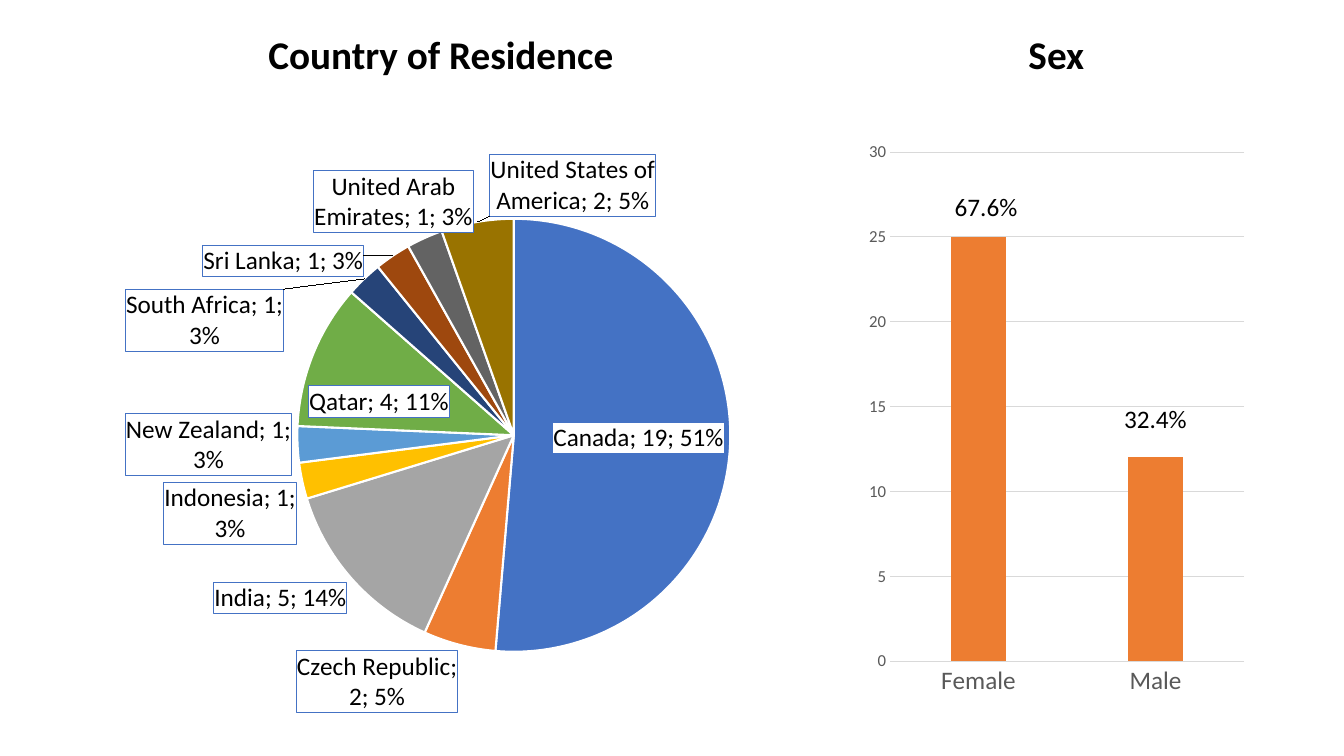
from dataclasses import dataclass

from lxml import etree
from pptx import Presentation
from pptx.chart.data import CategoryChartData
from pptx.dml.color import RGBColor
from pptx.enum.chart import XL_CHART_TYPE, XL_LABEL_POSITION, XL_TICK_MARK
from pptx.enum.text import MSO_ANCHOR, MSO_AUTO_SIZE, PP_ALIGN
from pptx.oxml import parse_xml
from pptx.oxml.ns import nsdecls, qn
from pptx.util import Cm, Pt

PIE, COLUMN = XL_CHART_TYPE.PIE, XL_CHART_TYPE.COLUMN_CLUSTERED
BEST_FIT = XL_LABEL_POSITION.BEST_FIT
NO_TICK = XL_TICK_MARK.NONE
CENTER, MIDDLE, NO_FIT = PP_ALIGN.CENTER, MSO_ANCHOR.MIDDLE, MSO_AUTO_SIZE.NONE


@dataclass(frozen=True)
class Theme:
    """Colours, font and type sizes of the slide."""
    font: str = "Calibri"
    heading: int = 28
    label: int = 18
    scale: int = 12
    base: int = 10
    ink: str = "000000"
    muted: str = "595959"
    grid: str = "D9D9D9"
    paper: str = "FFFFFF"
    frame: str = "4472C4"
    bar: str = "ED7D31"
    slices: tuple = ("4472C4", "ED7D31", "A5A5A5", "FFC000", "5B9BD5",
                     "70AD47", "264478", "9E480E", "636363", "997300")


@dataclass(frozen=True)
class Box:
    """A rectangle in centimetres."""
    left: float
    top: float
    width: float
    height: float

    def emu(self):
        """Return the rectangle as lengths."""
        return Cm(self.left), Cm(self.top), Cm(self.width), Cm(self.height)


THEME = Theme()
COUNTRIES = {
    "Canada": 19, "Czech Republic": 2, "India": 5, "Indonesia": 1,
    "New Zealand": 1, "Qatar": 4, "South Africa": 1, "Sri Lanka": 1,
    "United Arab Emirates": 1, "United States of America": 2,
}
SEXES = {"Female": 25, "Male": 12}
SHARES = (("67.6%", 3.16, 4.06), ("32.4%", 7.43, 9.39))


def style_font(font, size, color=THEME.ink, bold=False):
    """Apply the theme font with a size and colour."""
    font.name, font.size, font.bold = THEME.font, Pt(size), bold
    font.color.rgb = RGBColor.from_string(color)


def style_line(line, color, width):
    """Give a line a colour and a width."""
    line.color.rgb = RGBColor.from_string(color)
    line.width = Pt(width)


def write_centered(holder, box, text, size, bold=False):
    """Place one centred line of text in a box."""
    holder.left, holder.top, holder.width, holder.height = box.emu()
    frame = holder.text_frame
    frame.auto_size, frame.word_wrap = NO_FIT, False
    frame.vertical_anchor = MIDDLE
    paragraph = frame.paragraphs[0]
    paragraph.alignment = CENTER
    run = paragraph.add_run()
    run.text = text
    style_font(run.font, size, bold=bold)


def add_heading(holder, region, text, width):
    """Centre a heading at the top of its region."""
    left = region.left + (region.width - width) / 2
    write_centered(holder, Box(left, region.top, width, 1.45), text, THEME.heading, True)


def add_count_chart(slide, kind, region, offset, counts, plot_area):
    """Add a plain chart below the heading with a fixed inner plot area."""
    data = CategoryChartData()
    data.categories = list(counts)
    data.add_series("Series 1", list(counts.values()))
    box = Box(region.left, region.top + offset, region.width, region.height - offset)
    chart = slide.shapes.add_chart(kind, *box.emu(), data).chart
    chart.has_legend = chart.has_title = False
    style_font(chart.font, THEME.base)
    area = chart.plots[0]._element.getparent()
    for old in area.findall(qn("c:layout")):
        area.remove(old)
    places = "".join(f'<c:{tag} val="{value}"/>' for tag, value in zip("xywh", plot_area))
    area.insert(0, parse_xml(
        f'<c:layout {nsdecls("c")}><c:manualLayout><c:layoutTarget val="inner"/>'
        f'<c:xMode val="edge"/><c:yMode val="edge"/>{places}</c:manualLayout></c:layout>'))
    return chart


def frame_labels(labels):
    """Give data labels a white fill, a thin frame and a separator."""
    element = labels._element
    element.find(qn("c:txPr")).addprevious(parse_xml(
        f'<c:spPr {nsdecls("c", "a")}><a:solidFill><a:srgbClr val="{THEME.paper}"/></a:solidFill>'
        f'<a:ln w="9525"><a:solidFill><a:srgbClr val="{THEME.frame}"/></a:solidFill></a:ln></c:spPr>'))
    separator = etree.Element(qn("c:separator"))
    separator.text = "; "
    last_flag = element.find(qn("c:showBubbleSize"))
    if last_flag is None:
        last_flag = element.find(qn("c:showPercent"))
    last_flag.addnext(separator)


def add_residence(slide, region):
    """Build the country of residence pie with its heading."""
    add_heading(slide.shapes.title, region, "Country of Residence", 9.3)
    chart = add_count_chart(slide, PIE, region, 2.08, COUNTRIES, (0.329, 0.178, 0.516, 0.695))
    plot = chart.plots[0]
    plot.vary_by_categories = True
    for index, color in enumerate(THEME.slices):
        country = plot.series[0].points[index].format
        country.fill.solid()
        country.fill.fore_color.rgb = RGBColor.from_string(color)
        style_line(country.line, THEME.paper, 1.5)
    plot.has_data_labels = True
    labels = plot.data_labels
    labels.show_category_name = labels.show_value = labels.show_percentage = True
    labels.position = BEST_FIT
    style_font(labels.font, THEME.label)
    frame_labels(labels)


def add_sex(slide, region):
    """Build the sex column chart with its heading and shares."""
    add_heading(slide.shapes.add_textbox(0, 0, 0, 0), region, "Sex", 1.93)
    chart = add_count_chart(slide, COLUMN, region, 2.64, SEXES, (0.075, 0.038, 0.905, 0.883))
    plot = chart.plots[0]
    plot.vary_by_categories = False
    plot.gap_width, plot.overlap = 219, -27
    fill = plot.series[0].format.fill
    fill.solid()
    fill.fore_color.rgb = RGBColor.from_string(THEME.bar)
    sexes, counts = chart.category_axis, chart.value_axis
    for axis, size in ((sexes, THEME.label), (counts, THEME.scale)):
        axis.major_tick_mark = axis.minor_tick_mark = NO_TICK
        style_font(axis.tick_labels.font, size, THEME.muted)
    style_line(sexes.format.line, THEME.grid, 0.75)
    counts.minimum_scale, counts.maximum_scale, counts.major_unit = 0, 30, 5
    counts.format.line.fill.background()
    counts.has_major_gridlines = True
    style_line(counts.major_gridlines.format.line, THEME.grid, 0.75)
    for share, center, top in SHARES:
        box = Box(region.left + center - 1.05, region.top + top, 2.1, 1.02)
        write_centered(slide.shapes.add_textbox(0, 0, 0, 0), box, share, THEME.label)


def main():
    """Build and save the slide."""
    deck = Presentation()
    deck.slide_width, deck.slide_height = Cm(33.87), Cm(19.05)
    slide = deck.slides.add_slide(deck.slide_layouts[5])
    add_residence(slide, Box(0.53, 0.64, 21.16, 17.78))
    add_sex(slide, Box(21.69, 0.64, 9.86, 17.17))
    deck.save("out.pptx")


if __name__ == "__main__":
    main()
